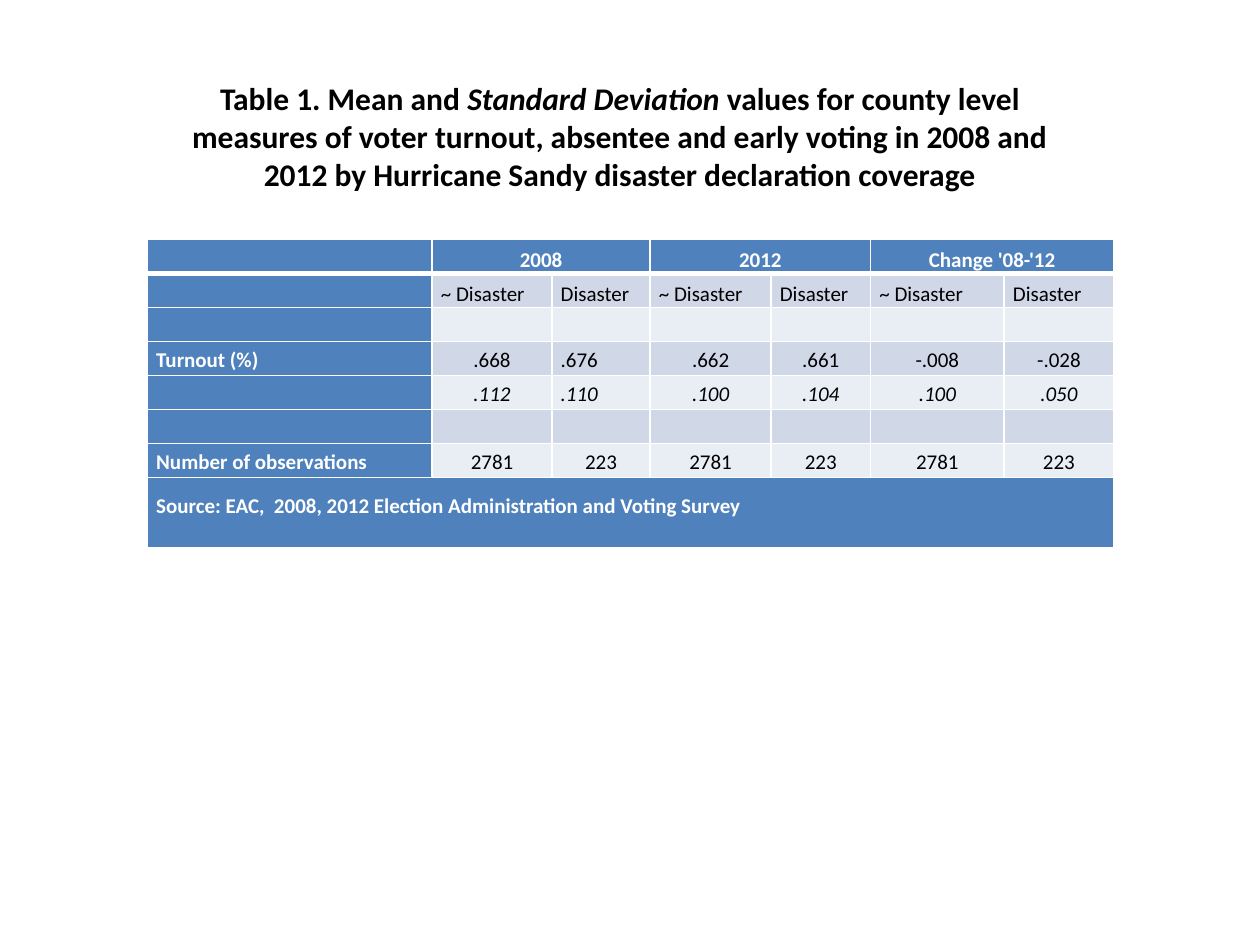
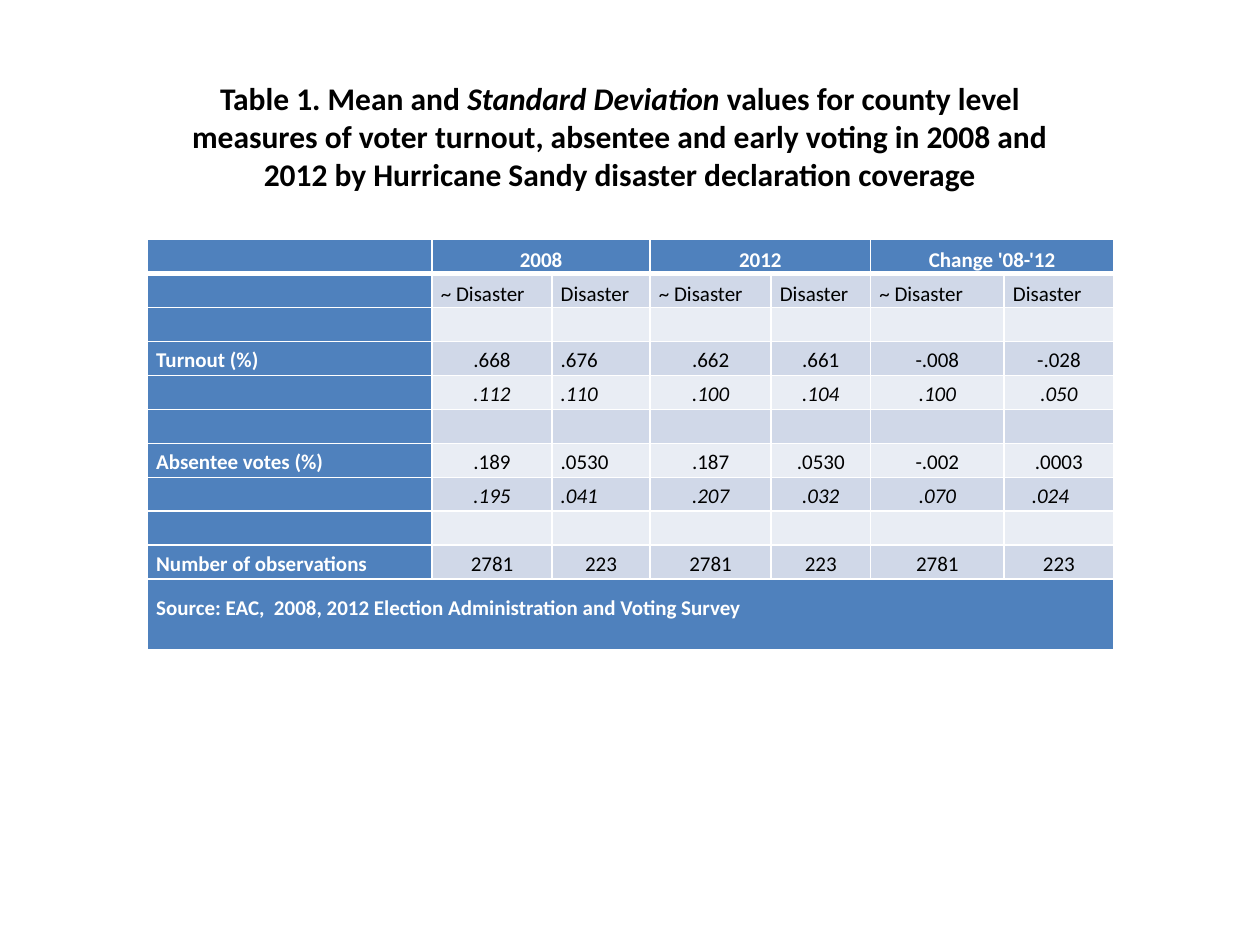
from lxml import etree
from pptx import Presentation
from pptx.dml.color import RGBColor
from pptx.enum.text import MSO_ANCHOR as ANCHOR, MSO_AUTO_SIZE as AUTO, PP_ALIGN as ALIGN
from pptx.oxml.ns import qn
from pptx.util import Inches, Pt

BLUE = RGBColor(0x4F, 0x81, 0xBD)
BAND_DARK = RGBColor(0xD0, 0xD8, 0xE8)
BAND_LIGHT = RGBColor(0xE9, 0xED, 0xF4)
WHITE = RGBColor(0xFF, 0xFF, 0xFF)
BLACK = RGBColor(0x00, 0x00, 0x00)

# Title runs: text, italic
TITLE = [
    ("Table 1. Mean and ", False),
    ("Standard Deviation", True),
    (" values for county level measures of voter turnout, absentee and early voting "
     "in 2008 and 2012 by Hurricane Sandy disaster declaration coverage", False),
]
BLANK = [""] * 7
HEADER = ["", "2008", "", "2012", "", "Change '08-'12", ""]
GROUPS = [""] + ["~ Disaster", "Disaster"] * 3
OBSERVATIONS = ["Number of observations"] + ["2781", "223"] * 3
SOURCE = ["Source: EAC,  2008, 2012 Election Administration and Voting Survey"] + [""] * 6
TURNOUT = [
    ["Turnout (%)", ".668", ".676", ".662", ".661", "-.008", "-.028"],
    ["", ".112", ".110", ".100", ".104", ".100", ".050"],
]
ABSENTEE = [
    ["Absentee votes (%)", ".189", ".0530", ".187", ".0530", "-.002", ".0003"],
    ["", ".195", ".041", ".207", ".032", ".070", ".024"],
]
SLIDES = [[TURNOUT], [TURNOUT, ABSENTEE]]

COL_WIDTHS = [2.26, 0.95, 0.78, 0.96, 0.79, 1.06, 0.87]
ROW_H, SOURCE_H = 0.27, 0.56
TABLE_LEFT, TABLE_TOP = 1.17, 1.9
TITLE_BOX = (1.42, 0.58, 7, 1.31)
TEXT_SIZE = 12
CELL_FORMAT = dict(margin_left=Inches(0.07), margin_right=Inches(0.07),
                   margin_top=0, margin_bottom=0, vertical_anchor=ANCHOR.MIDDLE)


def set_attrs(obj, **values):
    for name, value in values.items():
        setattr(obj, name, value)


def set_borders(cell, top=1, bottom=1):
    """Draw white cell borders; widths are in points."""
    tc_pr = cell._tc.get_or_add_tcPr()
    for side, width in (("L", 1), ("R", 1), ("T", top), ("B", bottom)):
        ln = etree.SubElement(tc_pr, qn(f"a:ln{side}"), w=str(Pt(width)))
        fill = etree.SubElement(ln, qn("a:solidFill"))
        etree.SubElement(fill, qn("a:srgbClr"), val=str(WHITE))


def write_cell(cell, text, fill, align, color, bold, italic):
    set_attrs(cell, **CELL_FORMAT)
    cell.fill.solid()
    cell.fill.fore_color.rgb = fill
    p = cell.text_frame.paragraphs[0]
    set_attrs(p, alignment=align, line_spacing=1.15)
    if text:
        r = p.add_run()
        r.text = text
        set_attrs(r.font, name="Calibri", size=Pt(TEXT_SIZE), bold=bold, italic=italic)
        r.font.color.rgb = color
    else:
        etree.SubElement(p._p, qn("a:endParaRPr"), sz=str(TEXT_SIZE * 100))


def add_title(slide):
    sp = slide.shapes.title
    set_attrs(sp, **dict(zip(("left", "top", "width", "height"), map(Inches, TITLE_BOX))))
    tf = sp.text_frame
    set_attrs(tf, word_wrap=True, auto_size=AUTO.NONE, vertical_anchor=ANCHOR.TOP)
    p = tf.paragraphs[0]
    p.alignment = ALIGN.CENTER
    for text, italic in TITLE:
        r = p.add_run()
        r.text = text
        set_attrs(r.font, name="Calibri", size=Pt(18), bold=True, italic=italic)
        r.font.color.rgb = BLACK


def add_turnout_table(slide, measures):
    rows = [HEADER, GROUPS, BLANK]
    for means, deviations in measures:
        rows += [means, deviations, BLANK]
    rows += [OBSERVATIONS, SOURCE]
    last = len(rows) - 1
    height = ROW_H * last + SOURCE_H
    table = slide.shapes.add_table(
        len(rows), len(COL_WIDTHS), Inches(TABLE_LEFT), Inches(TABLE_TOP),
        Inches(sum(COL_WIDTHS)), Inches(height)).table
    for col, width in zip(table.columns, COL_WIDTHS):
        col.width = Inches(width)

    deviation_rows = [deviations for _, deviations in measures]
    measure_rows = [row for pair in measures for row in pair]
    for i, row in enumerate(rows):
        table.rows[i].height = Inches(SOURCE_H if i == last else ROW_H)
        for j, text in enumerate(row):
            cell = table.cell(i, j)
            is_label = j == 0 or i in (0, last)
            left = (i in (1, last) or j == 0 or (j == 2 and row in measure_rows))
            set_borders(cell, top=3 if i == 1 else 1, bottom=3 if i == 0 else 1)
            write_cell(cell, text,
                       fill=BLUE if is_label else BAND_DARK if i % 2 else BAND_LIGHT,
                       align=ALIGN.LEFT if left else ALIGN.CENTER,
                       color=WHITE if is_label else BLACK,
                       bold=is_label, italic=row in deviation_rows)
            if i in (0, 1, last):
                cell.vertical_anchor = ANCHOR.BOTTOM

    for j in (1, 3, 5):
        table.cell(0, j).merge(table.cell(0, j + 1))
    source = table.cell(last, 0)
    source.merge(table.cell(last, len(COL_WIDTHS) - 1))
    source.margin_bottom = Inches(0.23)
    if ABSENTEE in measures:
        cell = table.cell(rows.index(ABSENTEE[1]), 6)
        cell.margin_left = Inches(0.22)
        cell.text_frame.paragraphs[0].alignment = ALIGN.LEFT


def main():
    prs = Presentation()
    set_attrs(prs, slide_width=Inches(10), slide_height=Inches(7.5))
    for measures in SLIDES:
        slide = prs.slides.add_slide(prs.slide_layouts[5])
        add_title(slide)
        add_turnout_table(slide, measures)
    prs.save("out.pptx")


if __name__ == "__main__":
    main()
